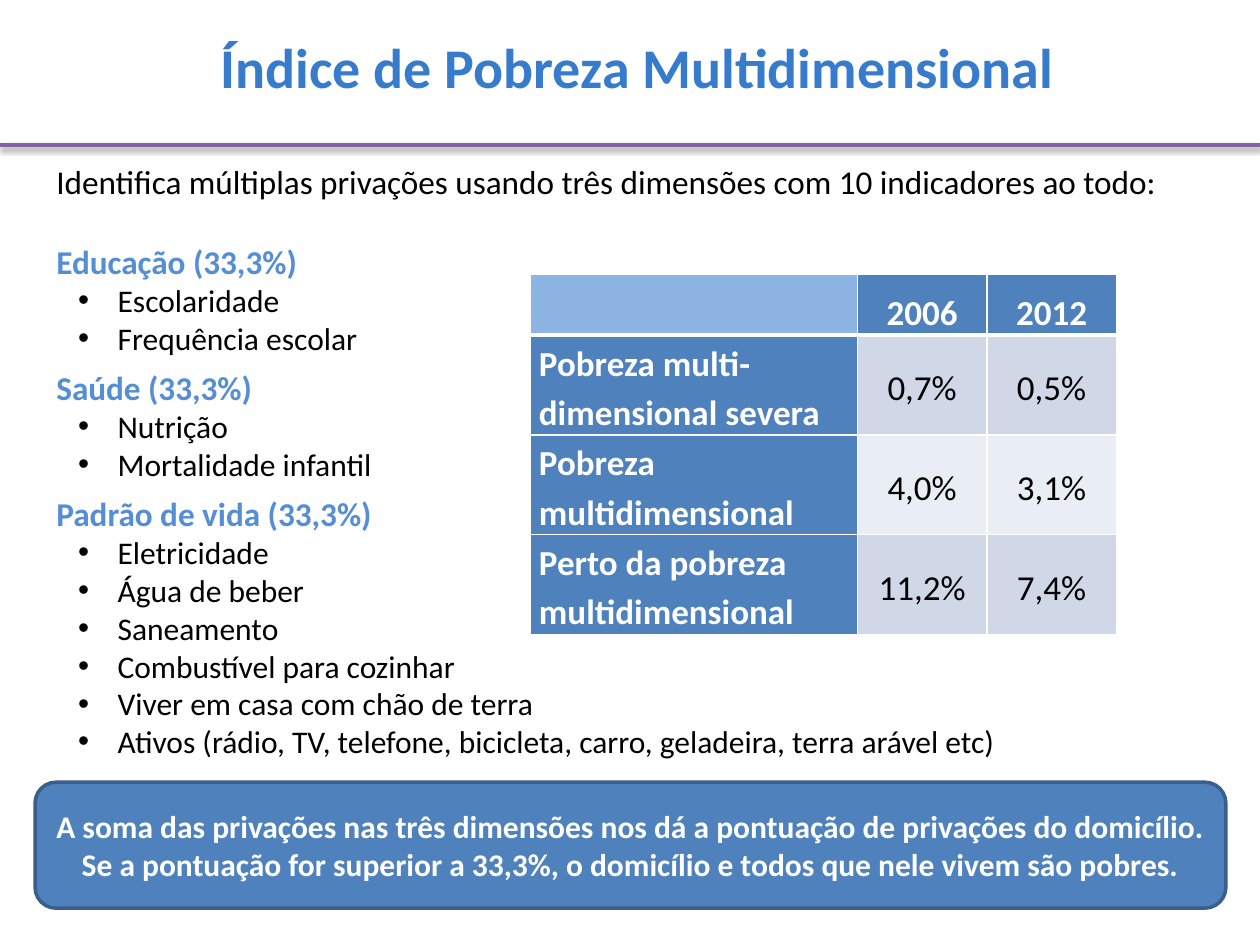
from dataclasses import dataclass

from lxml.etree import SubElement
from pptx import Presentation
from pptx.dml.color import RGBColor
from pptx.enum.shapes import MSO_CONNECTOR, MSO_SHAPE
from pptx.enum.text import MSO_ANCHOR, MSO_AUTO_SIZE, PP_ALIGN
from pptx.oxml.ns import qn
from pptx.util import Pt

TITLE = "Índice de Pobreza Multidimensional"
INTRO = "Identifica múltiplas privações usando três dimensões com 10 indicadores ao todo:"
DIMENSIONS = [
    ("Educação (33,3%)", ["Escolaridade", "Frequência escolar"]),
    ("Saúde (33,3%)", ["Nutrição", "Mortalidade infantil"]),
    ("Padrão de vida (33,3%)", [
        "Eletricidade",
        "Água de beber",
        "Saneamento",
        "Combustível para cozinhar",
        "Viver em casa com chão de terra",
        "Ativos (rádio, TV, telefone, bicicleta, carro, geladeira, terra arável etc)",
    ]),
]
POVERTY_TABLE = [
    ("", "2006", "2012"),
    ("Pobreza multi-dimensional severa", "0,7%", "0,5%"),
    ("Pobreza multidimensional", "4,0%", "3,1%"),
    ("Perto da pobreza multidimensional", "11,2%", "7,4%"),
]
CONCLUSION = [
    "A soma das privações nas três dimensões nos dá a pontuação de privações do domicílio.",
    "Se a pontuação for superior a 33,3%, o domicílio e todos que nele vivem são pobres.",
]


@dataclass(frozen=True)
class Theme:
    font: str = "Calibri"
    title: str = "377BCD"
    heading: str = "558ED5"
    text: str = "000000"
    white: str = "FFFFFF"
    blue: str = "4F81BD"
    outline: str = "3A5F8C"
    rule: str = "8064A2"
    corner: str = "8EB4E3"
    bands: tuple = ("D0D8E8", "E9EDF4")
    title_size: int = 32
    table_size: int = 20
    heading_size: int = 19
    text_size: int = 18


THEME = Theme()
PAGE_WIDTH, PAGE_HEIGHT = 720, 540
COLUMN_WIDTHS = (187, 74, 74)
HEADER_HEIGHT, ROW_HEIGHT = 35, 56


def color(value):
    return RGBColor.from_string(value)


def place(box, left, top, width, height):
    box.left, box.top, box.width, box.height = Pt(left), Pt(top), Pt(width), Pt(height)


def style(para, size, value, bold=False, align=PP_ALIGN.LEFT):
    para.alignment = align
    para.font.name = THEME.font
    para.font.size = Pt(size)
    para.font.bold = bold
    para.font.color.rgb = color(value)


def fill_frame(frame, texts):
    frame.text = "\n".join(texts)
    frame.word_wrap = True
    frame.auto_size = MSO_AUTO_SIZE.NONE
    return frame.paragraphs


def set_bullet(para, bulleted):
    properties = para._p.get_or_add_pPr()
    properties.set("marL", str(Pt(35 if bulleted else 0)))
    properties.set("indent", str(Pt(-22.5 if bulleted else 0)))
    if bulleted:
        SubElement(properties, qn("a:buFont"), typeface="Arial")
        SubElement(properties, qn("a:buChar"), char="•")
    else:
        SubElement(properties, qn("a:buNone"))


def add_title(page):
    box = page.shapes.title
    place(box, 8.5, 14.5, 711.5, 46)
    para, = fill_frame(box.text_frame, [TITLE])
    box.text_frame.vertical_anchor = MSO_ANCHOR.MIDDLE
    style(para, THEME.title_size, THEME.title, True, PP_ALIGN.CENTER)


def add_rule(page):
    rule = page.shapes.add_connector(MSO_CONNECTOR.STRAIGHT, 0, Pt(83), Pt(PAGE_WIDTH), Pt(83))
    rule.line.color.rgb = color(THEME.rule)
    rule.line.width = Pt(2)
    effects = SubElement(rule._element.spPr, qn("a:effectLst"))
    shadow = SubElement(effects, qn("a:outerShdw"), blurRad=str(Pt(3.1)),
                        dist=str(Pt(1.6)), dir="5400000", rotWithShape="0")
    black = SubElement(shadow, qn("a:srgbClr"), val=THEME.text)
    SubElement(black, qn("a:alpha"), val="38000")


def add_dimensions(page):
    lines = [(INTRO, "intro", 0)]
    for number, (heading, indicators) in enumerate(DIMENSIONS):
        lines.append((heading, "heading", 6 if number else 23))
        lines += [(indicator, "bullet", 0) for indicator in indicators]
    box = page.placeholders[1]
    place(box, 25, 88.5, 686, 365)
    paragraphs = fill_frame(box.text_frame, [text for text, _, _ in lines])
    for para, (_, role, space) in zip(paragraphs, lines):
        para.space_before = Pt(space)
        set_bullet(para, role == "bullet")
        style(para,
              THEME.text_size if role == "bullet" else THEME.heading_size,
              THEME.heading if role == "heading" else THEME.text,
              role == "heading")


def add_borders(cell, bottom):
    properties = cell._tc.get_or_add_tcPr()
    for side, width in (("L", 1), ("R", 1), ("T", 1), ("B", bottom)):
        line = SubElement(properties, qn(f"a:ln{side}"), w=str(Pt(width)))
        fill = SubElement(line, qn("a:solidFill"))
        SubElement(fill, qn("a:srgbClr"), val=THEME.white)


def add_poverty_table(page):
    heights = [HEADER_HEIGHT] + [ROW_HEIGHT] * (len(POVERTY_TABLE) - 1)
    table = page.shapes.add_table(len(heights), len(COLUMN_WIDTHS), Pt(303), Pt(156.5),
                                  Pt(sum(COLUMN_WIDTHS)), Pt(sum(heights))).table
    for column, width in zip(table.columns, COLUMN_WIDTHS):
        column.width = Pt(width)
    for row, (values, height) in enumerate(zip(POVERTY_TABLE, heights)):
        table.rows[row].height = Pt(height)
        for column, value in enumerate(values):
            cell = table.cell(row, column)
            header, label = row == 0, column == 0
            add_borders(cell, 3 if header else 1)
            if header and label:
                background = THEME.corner
            elif header or label:
                background = THEME.blue
            else:
                background = THEME.bands[(row - 1) % 2]
            cell.fill.solid()
            cell.fill.fore_color.rgb = color(background)
            cell.margin_left = cell.margin_right = Pt(5)
            cell.margin_top, cell.margin_bottom = Pt(0.7), 0
            cell.vertical_anchor = (MSO_ANCHOR.BOTTOM if header else
                                    MSO_ANCHOR.TOP if label else MSO_ANCHOR.MIDDLE)
            cell.text = value
            para = cell.text_frame.paragraphs[0]
            para.line_spacing = 1.15
            para.space_after = Pt(10)
            style(para, THEME.table_size, THEME.white if header or label else THEME.text,
                  header or label, PP_ALIGN.LEFT if label else PP_ALIGN.CENTER)


def add_conclusion(page):
    box = page.shapes.add_shape(MSO_SHAPE.ROUNDED_RECTANGLE, Pt(20), Pt(447), Pt(680.5), Pt(72))
    box.shadow.inherit = False
    box.fill.solid()
    box.fill.fore_color.rgb = color(THEME.blue)
    box.line.color.rgb = color(THEME.outline)
    box.line.width = Pt(2)
    box.text_frame.margin_left = box.text_frame.margin_right = Pt(4)
    box.text_frame.vertical_anchor = MSO_ANCHOR.MIDDLE
    for para in fill_frame(box.text_frame, CONCLUSION):
        style(para, THEME.text_size, THEME.white, True, PP_ALIGN.CENTER)


def main():
    deck = Presentation()
    deck.slide_width, deck.slide_height = Pt(PAGE_WIDTH), Pt(PAGE_HEIGHT)
    page = deck.slides.add_slide(deck.slide_layouts[1])
    add_title(page)
    add_rule(page)
    add_dimensions(page)
    add_conclusion(page)
    add_poverty_table(page)
    deck.save("out.pptx")


if __name__ == "__main__":
    main()
